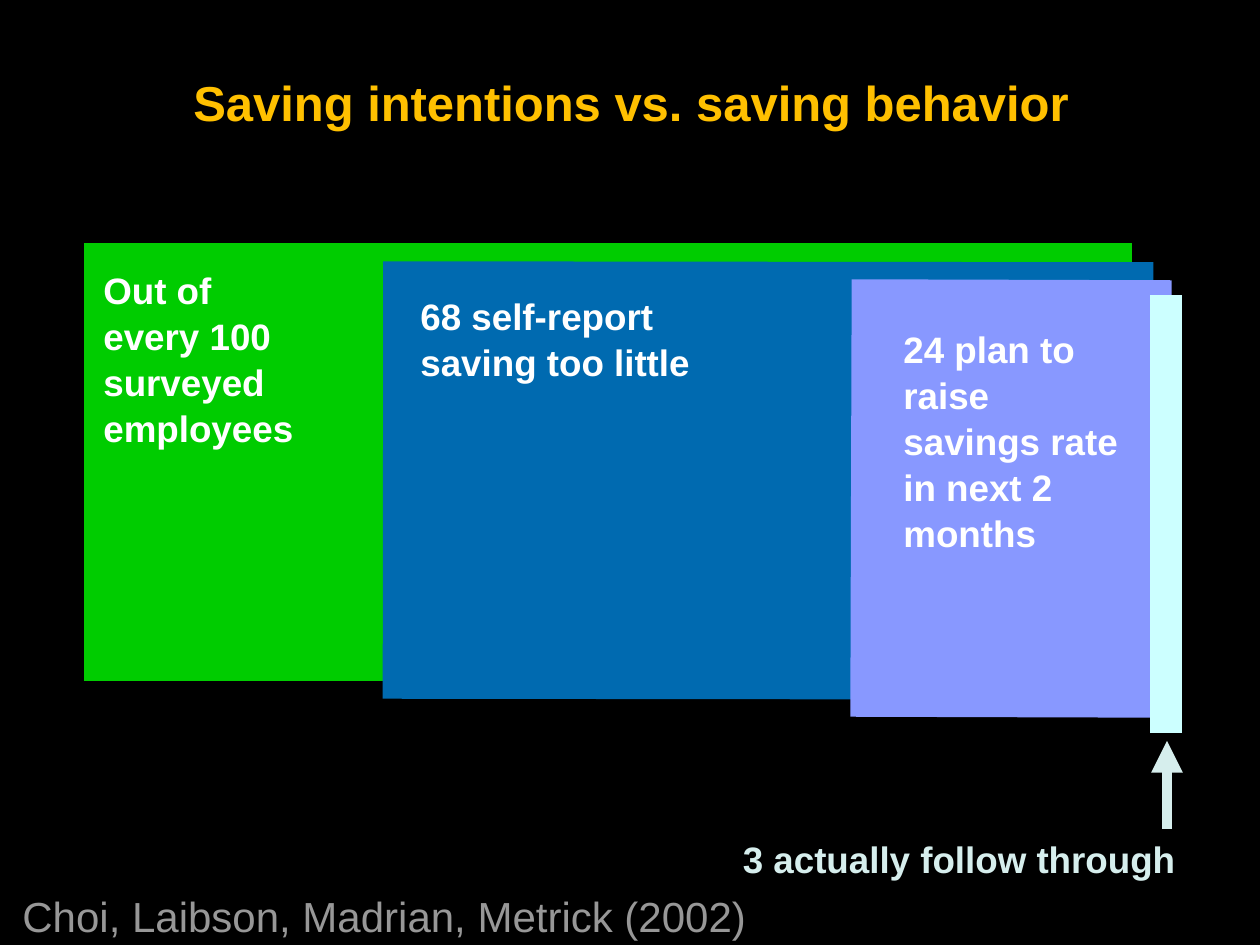
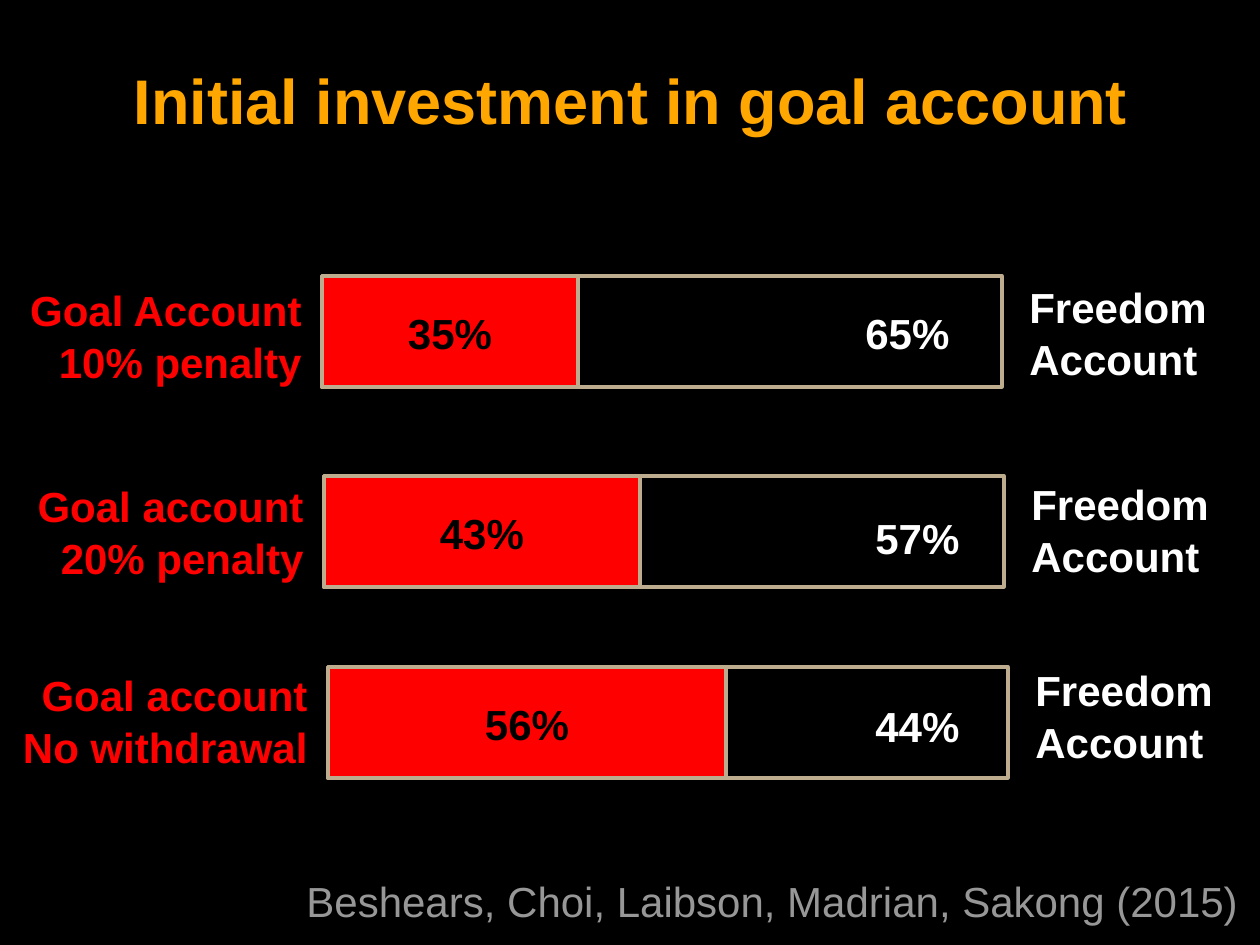
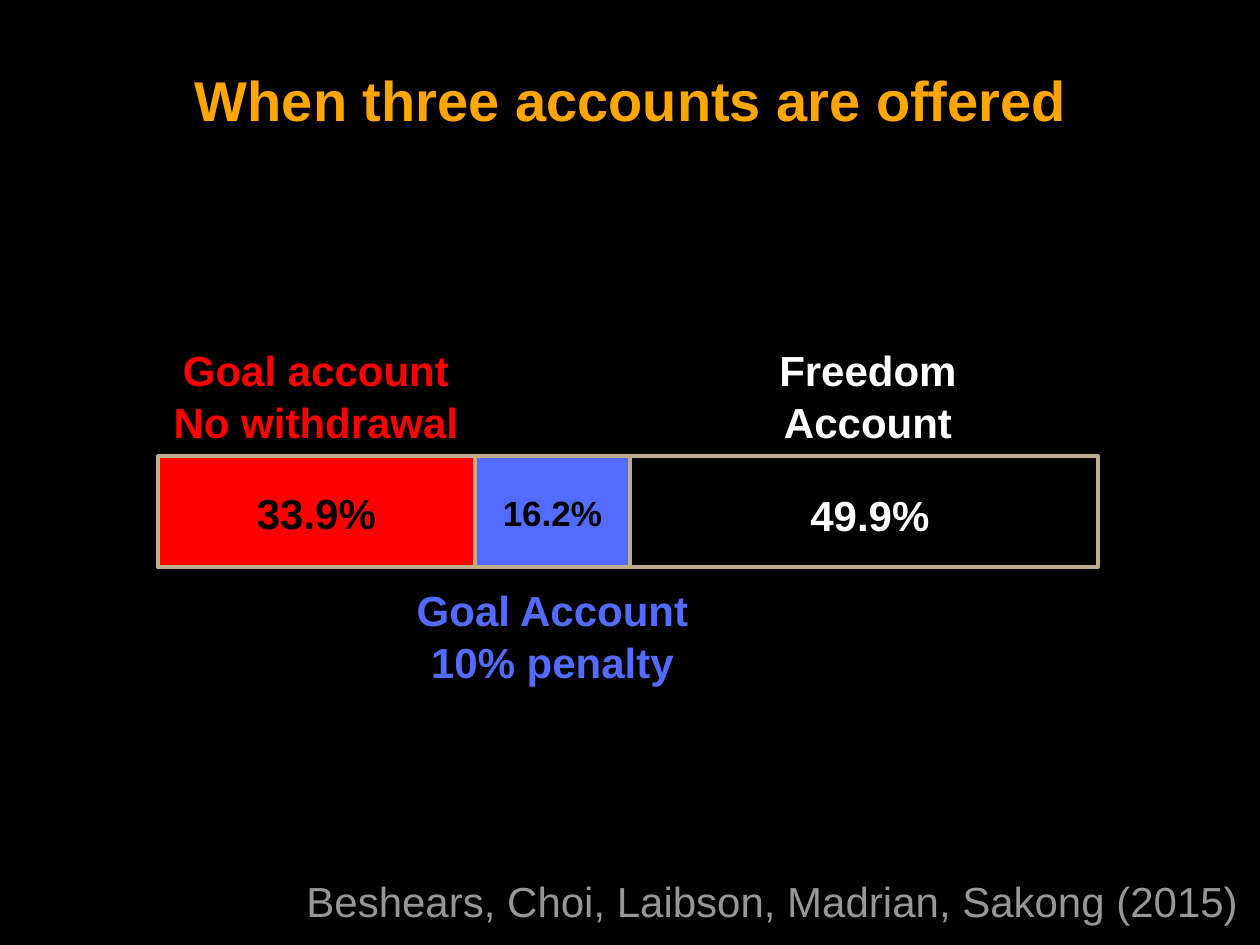
"""Build three slides on saving intentions and goal accounts."""
import lxml.etree
import pptx
import pptx.dml.color
import pptx.enum.shapes
import pptx.enum.text
import pptx.oxml.ns
import pptx.util

ALIGN = {
    "l": pptx.enum.text.PP_ALIGN.LEFT,
    "c": pptx.enum.text.PP_ALIGN.CENTER,
    "r": pptx.enum.text.PP_ALIGN.RIGHT,
}
MIDDLE = pptx.enum.text.MSO_ANCHOR.MIDDLE
BLACK, WHITE, GREY = "000000", "FFFFFF", "979797"
GOLD, ORANGE, TAN = "FFC000", "FFA600", "BDAC8D"
RED, BLUE, MINT = "FF0000", "536BFF", "D6EEED"


def px(n):
    return round(n * 914400 / 126)


def rgb(color):
    return pptx.dml.color.RGBColor.from_string(color)


class Deck:
    font = "Arial"
    size = 24
    spacing = 1.04
    bar_height = 111

    def __init__(self):
        self.prs = pptx.Presentation()
        self.prs.slide_width, self.prs.slide_height = px(1260), px(945)

    def slide(self, title, size, color, top=19):
        self.s = self.prs.slides.add_slide(self.prs.slide_layouts[6])
        self.s.background.fill.solid()
        self.s.background.fill.fore_color.rgb = rgb(BLACK)
        sp = self.text(title, 30, top, 1202, 158, color, "c", size)
        sp.text_frame.vertical_anchor = MIDDLE

    def style_text(self, tf, text, color, align, size, bold=True):
        tf.text = text
        for p in tf.paragraphs:
            p.alignment = ALIGN[align]
            p.line_spacing = self.spacing
            for r in p.runs:
                r.font.name = self.font
                r.font.size = pptx.util.Pt(size)
                r.font.bold = bold
                r.font.color.rgb = rgb(color)

    def text(self, text, x, y, w, h, color=WHITE, align="l", size=size, bold=True, wrap=False):
        sp = self.s.shapes.add_textbox(px(x), px(y), px(w), px(h))
        sp.text_frame.word_wrap = wrap
        self.style_text(sp.text_frame, text, color, align, size, bold)
        return sp

    def bar(self, x, y, w, fill=None, text="", size=size):
        sp = self.s.shapes.add_shape(
            pptx.enum.shapes.MSO_SHAPE.RECTANGLE, px(x), px(y), px(w), px(self.bar_height))
        sp.shadow.inherit = False
        sp.line.color.rgb = rgb(TAN)
        sp.line.width = pptx.util.Pt(2)
        if fill:
            sp.fill.solid()
            sp.fill.fore_color.rgb = rgb(fill)
            sp.text_frame.vertical_anchor = MIDDLE
            self.style_text(sp.text_frame, text, BLACK, "c", size)
        else:
            sp.fill.background()

    def line(self, x1, y1, x2, y2, color, width, arrow=False):
        sp = self.s.shapes.add_connector(
            pptx.enum.shapes.MSO_CONNECTOR.STRAIGHT, px(x1), px(y1), px(x2), px(y2))
        sp.line.color.rgb = rgb(color)
        sp.line.width = pptx.util.Pt(width)
        qn = pptx.oxml.ns.qn
        sp_pr = sp.element.spPr
        if arrow:
            lxml.etree.SubElement(sp_pr.find(qn("a:ln")), qn("a:tailEnd"), type="triangle")
        lxml.etree.SubElement(sp_pr, qn("a:effectLst"))

    def source(self, text, x, y, w):
        self.text(text, x, y, w, 63, GREY, bold=False)


def saving_slide(deck):
    deck.slide("Saving intentions vs. saving behavior", 28, GOLD, 22)
    for x1, y1, x2, y2, color in (
        (84, 462, 1132, 462, "00CC00"),
        (383, 480, 1153, 481, "006AB0"),
        (851, 498, 1171, 499, "8898FF"),
        (1150, 514, 1182, 514, "CCFFFF"),
    ):
        deck.line(x1, y1, x2, y2, color, 250)
    for text, x, y, w, h in (
        ("Out of every 100 surveyed employees", 91, 260, 224, 189),
        ("68 self-report saving too little", 408, 286, 353, 101),
        ("24 plan to raise savings rate in next 2 months", 891, 319, 257, 233),
    ):
        deck.text(text, x, y, w, h, size=21, wrap=True)
    deck.text("3 actually follow through", 596, 829, 592, 57, MINT, "r", 21, wrap=True)
    deck.line(1167, 829, 1167, 741, MINT, 6, arrow=True)
    deck.source("Choi, Laibson, Madrian, Metrick (2002)", 10, 882, 757)


def investment_slide(deck, authors):
    deck.slide("Initial investment in goal account", 36, ORANGE)
    for goal, share, rest, x, y, w, goal_y, free_y, rest_x, rest_y in (
        ("Goal Account\n10% penalty", "35%", "65%", 322, 276, 256, 276, 273, 853, 299),
        ("Goal account\n20% penalty", "43%", "57%", 324, 476, 316, 472, 470, 863, 504),
        ("Goal account\nNo withdrawal", "56%", "44%", 328, 667, 398, 661, 656, 863, 692),
    ):
        deck.bar(x, y, 680)
        deck.bar(x, y, w, RED, share)
        deck.text(goal, x - 318, goal_y, 310, 115, RED, "r")
        deck.text("Freedom\nAccount", x + 695, free_y, 204, 115)
        deck.text(rest, rest_x, rest_y, 111, 63)
    deck.source(authors, 294, 867, 966)


def three_accounts_slide(deck, authors):
    deck.slide("When three accounts are offered", 32, ORANGE)
    deck.bar(158, 456, 940)
    deck.bar(158, 456, 317, RED, "33.9%")
    deck.bar(475, 456, 155, BLUE, "16.2%", 20)
    deck.text("49.9%", 798, 481, 146, 63)
    for text, x, y, w, color in (
        ("Goal account\nNo withdrawal", 160, 336, 312, RED),
        ("Freedom\nAccount", 766, 336, 204, WHITE),
        ("Goal Account\n10% penalty", 382, 576, 341, BLUE),
    ):
        deck.text(text, x, y, w, 115, color, "c")
    deck.source(authors, 294, 867, 966)


def main():
    deck = Deck()
    authors = "Beshears, Choi, Laibson, Madrian, Sakong (2015)"
    saving_slide(deck)
    investment_slide(deck, authors)
    three_accounts_slide(deck, authors)
    deck.prs.save("out.pptx")


if __name__ == "__main__":
    main()
